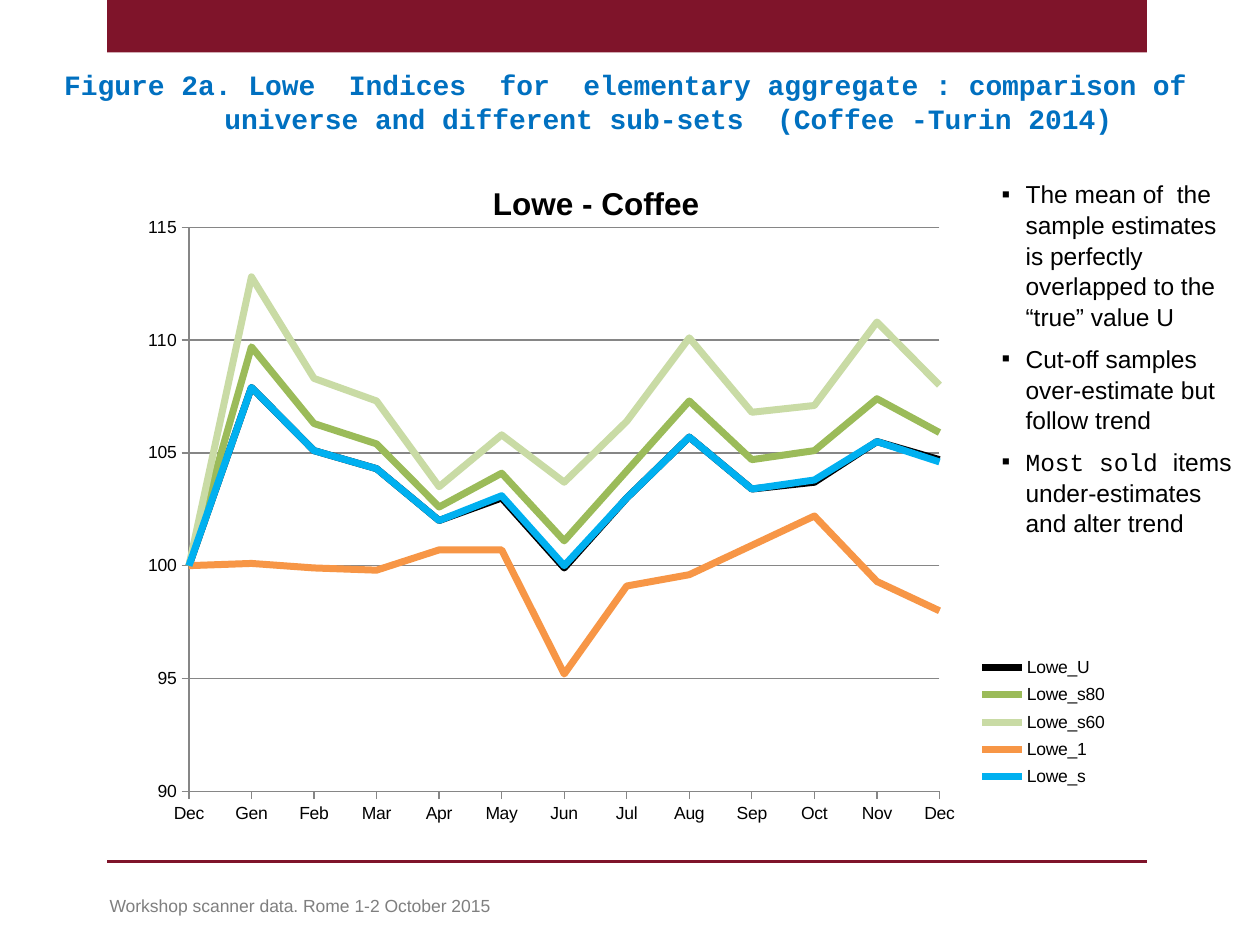
from lxml.etree import SubElement
from pptx import Presentation
from pptx.chart.data import CategoryChartData
from pptx.dml.color import RGBColor
from pptx.enum.chart import XL_CHART_TYPE, XL_LEGEND_POSITION, XL_MARKER_STYLE, XL_TICK_MARK
from pptx.enum.shapes import MSO_CONNECTOR, MSO_SHAPE
from pptx.enum.text import MSO_ANCHOR, MSO_AUTO_SIZE, PP_ALIGN
from pptx.oxml import parse_xml
from pptx.oxml.ns import nsdecls, qn
from pptx.util import Cm, Pt

MAROON, BLUE, BLACK, GREY, AXIS = "7F142A", "0070C0", "000000", "7F7F7F", "868686"
SANS, MONO = "Arial", "Courier New"

TITLE = ("Figure 2a. Lowe  Indices  for  elementary aggregate : comparison of "
         "universe and different sub-sets  (Coffee -Turin 2014)")
BULLETS = [
    [("The mean of  the sample estimates is perfectly overlapped to the “true” value U", SANS)],
    [("Cut-off samples over-estimate but follow trend", SANS)],
    [("Most sold ", MONO), ("items under-estimates and alter trend", SANS)],
]
FOOTER = "Workshop scanner data. Rome 1-2 October 2015"
CHART_TITLE = "Lowe - Coffee"
MONTHS = ["Dec", "Gen", "Feb", "Mar", "Apr", "May", "Jun",
          "Jul", "Aug", "Sep", "Oct", "Nov", "Dec"]
SERIES = [
    ("Lowe_U", "000000", [100, 107.9, 105.1, 104.3, 102, 103, 99.9,
                          103, 105.7, 103.4, 103.7, 105.5, 104.7]),
    ("Lowe_s80", "9BBB59", [100, 109.7, 106.3, 105.4, 102.6, 104.1, 101.1,
                            104.2, 107.3, 104.7, 105.1, 107.4, 105.9]),
    ("Lowe_s60", "C9DBA5", [100, 112.8, 108.3, 107.3, 103.5, 105.8, 103.7,
                            106.4, 110.1, 106.8, 107.1, 110.8, 108]),
    ("Lowe_1", "F79646", [100, 100.1, 99.9, 99.8, 100.7, 100.7, 95.2,
                          99.1, 99.6, 100.9, 102.2, 99.3, 98]),
    ("Lowe_s", "00B0F0", [100, 107.9, 105.1, 104.3, 102, 103.1, 100,
                          103, 105.7, 103.4, 103.8, 105.5, 104.6]),
]


def rgb(value):
    return RGBColor.from_string(value)


def place(sp, left, top, width, height):
    sp.left, sp.top, sp.width, sp.height = Cm(left), Cm(top), Cm(width), Cm(height)


def prepare(sp):
    """Make the frame wrap at a fixed size from the top; return it."""
    tf = sp.text_frame
    tf.word_wrap, tf.auto_size = True, MSO_AUTO_SIZE.NONE
    tf.vertical_anchor = MSO_ANCHOR.TOP
    return tf


def write(p, text, font=SANS, size=14, color=BLACK, bold=False):
    r = p.add_run()
    r.text = text
    r.font.name, r.font.size, r.font.bold = font, Pt(size), bold
    r.font.color.rgb = rgb(color)


def hang(p, indent, bullet=None):
    pPr = p._p.get_or_add_pPr()
    pPr.set("marL", str(Cm(indent)))
    pPr.set("indent", str(-Cm(indent)))
    if bullet:
        SubElement(pPr, qn("a:buFont"), typeface=SANS)
        SubElement(pPr, qn("a:buChar"), char=bullet)
    p.alignment = PP_ALIGN.LEFT
    p.space_before = Pt(0)


def set_layout(parent, index, inner=False, **fractions):
    """Give a chart part a manual layout in fractions of the chart."""
    for old in parent.findall(qn("c:layout")):
        parent.remove(old)
    layout = parent.makeelement(qn("c:layout"))
    parent.insert(index, layout)
    manual = SubElement(layout, qn("c:manualLayout"))
    if inner:
        SubElement(manual, qn("c:layoutTarget"), val="inner")
    for mode in ("xMode", "yMode"):
        SubElement(manual, qn("c:" + mode), val="edge")
    for key, value in fractions.items():
        SubElement(manual, qn("c:" + key), val=str(value))


def add_index_chart(s):
    data = CategoryChartData(number_format="0.0")
    data.categories = MONTHS
    for name, _, values in SERIES:
        data.add_series(name, values)
    chart = s.shapes.add_chart(XL_CHART_TYPE.LINE, Cm(1.65), Cm(3.02),
                               Cm(20.96), Cm(13.82), data).chart
    chart.font.name, chart.font.size = SANS, Pt(10)
    chart.font.color.rgb = rgb(BLACK)
    chart._chartSpace.chart.addnext(parse_xml(
        f'<c:spPr {nsdecls("c", "a")}><a:noFill/><a:ln><a:noFill/></a:ln></c:spPr>'))

    chart.has_title = True
    write(chart.chart_title.text_frame.paragraphs[0], CHART_TITLE, size=18, bold=True)
    chart.chart_title.include_in_layout = True
    set_layout(chart.chart_title._element, 1, x=0.39, y=0.04)

    chart.has_legend = True
    chart.legend.position = XL_LEGEND_POSITION.RIGHT
    chart.legend.include_in_layout = False
    set_layout(chart.legend._element, 1, x=0.85, y=0.73, w=0.15, h=0.21)
    set_layout(chart._chartSpace.chart.plotArea, 0, inner=True,
               x=0.103, y=0.113, w=0.722, h=0.823)

    val, cat = chart.value_axis, chart.category_axis
    val.minimum_scale, val.maximum_scale, val.major_unit = 90, 115, 5
    val.tick_labels.number_format = "0"
    val.tick_labels.number_format_is_linked = False
    val.has_major_gridlines = True
    for axis in (val, cat):
        axis.major_tick_mark = XL_TICK_MARK.OUTSIDE
        axis.minor_tick_mark = XL_TICK_MARK.NONE
    for line in (val.format.line, cat.format.line, val.major_gridlines.format.line):
        line.color.rgb, line.width = rgb(AXIS), Pt(0.75)
    # Points sit on the ticks, so the lines start at the value axis.
    val._element.find(qn("c:crosses")).addnext(
        parse_xml(f'<c:crossBetween {nsdecls("c")} val="midCat"/>'))

    for series, (_, color, _) in zip(chart.plots[0].series, SERIES):
        series.smooth = False
        series.marker.style = XL_MARKER_STYLE.NONE
        series.format.line.color.rgb = rgb(color)
        series.format.line.width = Pt(4)


def main():
    prs = Presentation()
    prs.slide_width, prs.slide_height = Cm(25.4), Cm(19.05)
    s = prs.slides.add_slide(prs.slide_layouts[1])

    band = s.shapes.add_shape(MSO_SHAPE.RECTANGLE, Cm(2.16), 0, Cm(20.96), Cm(1.06))
    band.shadow.inherit = False
    band.fill.solid()
    band.fill.fore_color.rgb = rgb(MAROON)
    band.line.fill.background()

    rule = s.shapes.add_connector(MSO_CONNECTOR.STRAIGHT, Cm(2.16), Cm(17.37),
                                  Cm(23.12), Cm(17.37))
    rule.line.color.rgb, rule.line.width = rgb(MAROON), Pt(2)
    SubElement(rule._element.spPr, qn("a:effectLst"))

    title, body = s.placeholders
    place(title, 1.04, 1.24, 23.5, 1.63)
    p = prepare(title).paragraphs[0]
    hang(p, 3.23)
    write(p, TITLE, font=MONO, size=16, color=BLUE, bold=True)

    place(body, 19.94, 3.45, 5.31, 7.44)
    tf = prepare(body)
    for i, runs in enumerate(BULLETS):
        p = tf.add_paragraph() if i else tf.paragraphs[0]
        hang(p, 0.48, bullet="▪")
        p.space_after, p.line_spacing = Pt(6), 1.05
        for text, font in runs:
            write(p, text, font=font)

    footer = s.shapes.add_textbox(Cm(1.96), Cm(17.91), Cm(16.99), Cm(0.69))
    write(prepare(footer).paragraphs[0], FOOTER, size=10, color=GREY)

    add_index_chart(s)
    prs.save("out.pptx")


if __name__ == "__main__":
    main()
